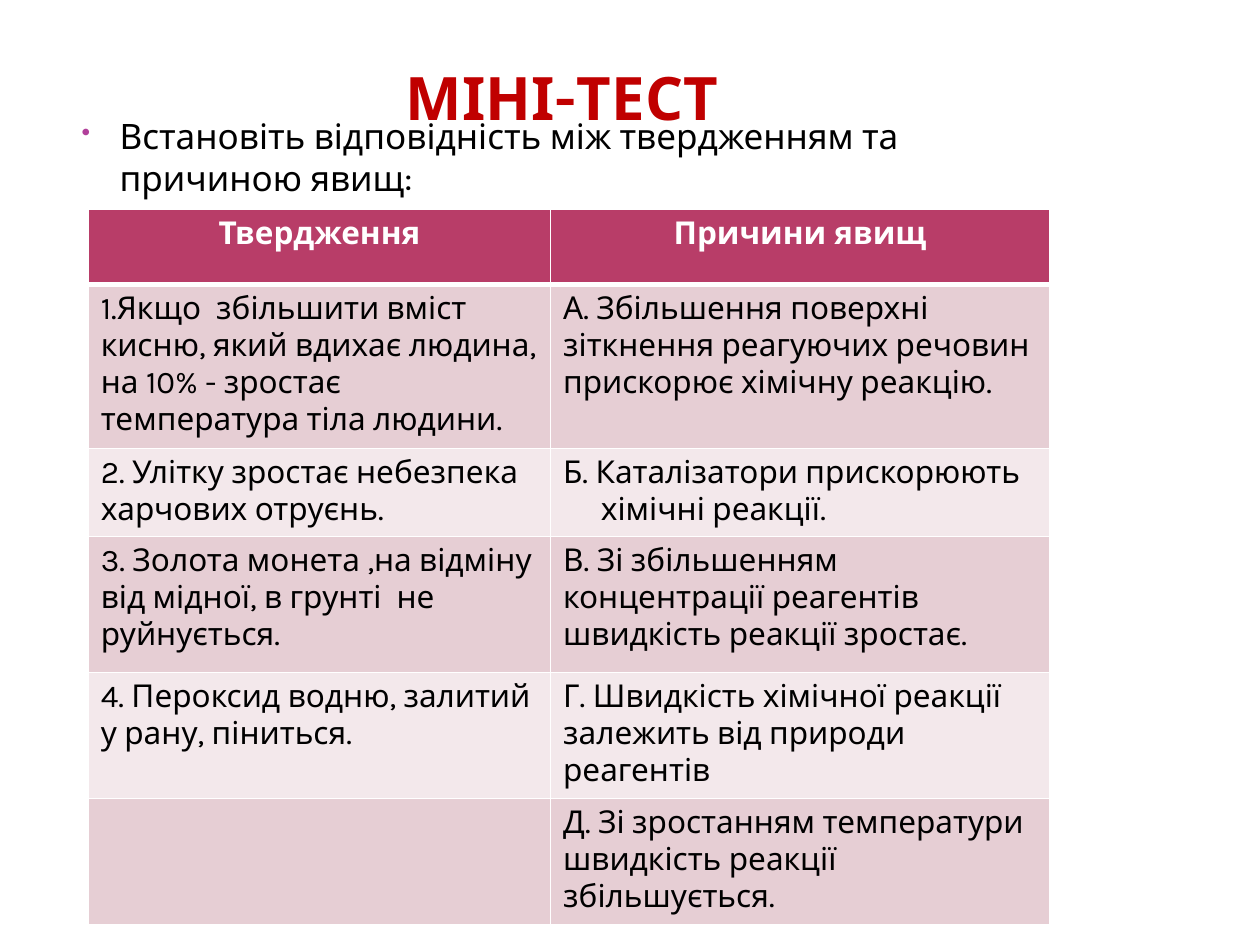
from collections import namedtuple
from dataclasses import dataclass

from lxml import etree
from pptx import Presentation
from pptx import util as u
from pptx.dml.color import RGBColor
from pptx.enum import text
from pptx.oxml.ns import qn

Box = namedtuple("Box", "left top width height")


@dataclass(frozen=True)
class Theme:
    """Colours, typeface and type sizes of the slide."""
    font: str = "Karla"
    title: str = "C00000"
    ink: str = "000000"
    paper: str = "FFFFFF"
    bullet: str = "B13F9A"
    header: str = "B83D68"
    bands: tuple = ("E6CED4", "F3E8EB")
    title_size: float = 34.2
    body_size: float = 20
    table_size: float = 18


THEME = Theme()
SLIDE_WIDTH, SLIDE_HEIGHT = u.Inches(10), u.Inches(7.5)
TITLE_BOX = Box(0.05, 0.047, 0.792, 0.167)
TASK_BOX = Box(0.055, 0.115, 0.792, 0.796)
TABLE_BOX = Box(0.07, 0.221, 0.763, 0.708)
COLUMN_INCHES = (3.67, 3.96)
ROW_INCHES = (0.6, 1.28, 0.69, 1.08, 0.69, 0.97)
ROWS = (
    ("Твердження", "Причини явищ"),
    ("1.Якщо  збільшити вміст кисню, який вдихає людина, на 10% - зростає температура тіла людини.",
     "А. Збільшення поверхні зіткнення реагуючих речовин прискорює хімічну реакцію."),
    ("2. Улітку зростає небезпека харчових отруєнь.",
     "Б. Каталізатори прискорюють хімічні реакції."),
    ("3. Золота монета ,на відміну від мідної, в грунті  не  руйнується.",
     "В. Зі збільшенням концентрації реагентів швидкість реакції зростає."),
    ("4. Пероксид водню, залитий у рану, піниться.",
     "Г. Швидкість хімічної реакції залежить від природи реагентів"),
    ("", "Д. Зі зростанням температури швидкість реакції збільшується."),
)
HANGING_CELL = (2, 1)


def place(box):
    """Turn shares of the slide into lengths."""
    return (int(box.left * SLIDE_WIDTH), int(box.top * SLIDE_HEIGHT),
            int(box.width * SLIDE_WIDTH), int(box.height * SLIDE_HEIGHT))


def write(frame, words, size, color=THEME.ink, bold=False,
          align=text.PP_ALIGN.LEFT, hang=0, bullet=None):
    """Write one formatted paragraph into a text frame."""
    frame.word_wrap = True
    para = frame.paragraphs[0]
    para.alignment = align
    props = para._p.get_or_add_pPr()
    if hang:
        props.set("marL", str(u.Inches(hang)))
        props.set("indent", str(-u.Inches(hang)))
    if bullet:
        tint = etree.SubElement(props, qn("a:buClr"))
        etree.SubElement(tint, qn("a:srgbClr"), val=THEME.bullet)
        etree.SubElement(props, qn("a:buSzPct"), val="73000")
        etree.SubElement(props, qn("a:buChar"), char=bullet)
    span = para.add_run()
    span.text = words
    span.font.name = THEME.font
    span.font.size = u.Pt(size)
    span.font.bold = bold
    span.font.color.rgb = RGBColor.from_string(color)


def add_title(page, box):
    """Format the title placeholder inside the box."""
    title = page.shapes.title
    title.left, title.top, title.width, title.height = place(box)
    frame = title.text_frame
    frame.auto_size = text.MSO_AUTO_SIZE.NONE
    frame.vertical_anchor = text.MSO_ANCHOR.BOTTOM
    frame.margin_left = frame.margin_right = u.Inches(0.05)
    frame.margin_top, frame.margin_bottom = 0, u.Inches(0.55)
    write(frame, "МІНІ-ТЕСТ", THEME.title_size, THEME.title, True, text.PP_ALIGN.CENTER)


def add_task(page, box):
    """Add the bulleted task above the table."""
    frame = page.shapes.add_textbox(*place(box)).text_frame
    write(frame, "Встановіть відповідність між твердженням та причиною явищ:",
          THEME.body_size, hang=0.3, bullet="•")


def set_borders(cell, **widths):
    """Draw the cell borders at the given widths in points."""
    props = cell._tc.get_or_add_tcPr()
    for side in "LRTB":
        line = etree.SubElement(props, qn(f"a:ln{side}"), w=str(u.Pt(widths.get(side, 1))))
        fill = etree.SubElement(line, qn("a:solidFill"))
        etree.SubElement(fill, qn("a:srgbClr"), val=THEME.paper)


def fill_cell(cell, row, column):
    """Fill, border and write one table cell."""
    is_header = row == 0
    rule = 3 if is_header else 1
    set_borders(cell, B=rule, T=3 if row == 1 else 1)
    cell.fill.solid()
    color = THEME.header if is_header else THEME.bands[(row - 1) % 2]
    cell.fill.fore_color.rgb = RGBColor.from_string(color)
    words = ROWS[row][column]
    if words:
        write(cell.text_frame, words, THEME.table_size,
              THEME.paper if is_header else THEME.ink, is_header,
              text.PP_ALIGN.CENTER if is_header else text.PP_ALIGN.LEFT,
              hang=0.3 if (row, column) == HANGING_CELL else 0)


def add_matching_table(page, box):
    """Add the table of statements and causes."""
    table = page.shapes.add_table(len(ROWS), len(COLUMN_INCHES), *place(box)).table
    for column, width in zip(table.columns, COLUMN_INCHES):
        column.width = u.Inches(width)
    for row, height in enumerate(ROW_INCHES):
        table.rows[row].height = u.Inches(height)
        for column in range(len(COLUMN_INCHES)):
            fill_cell(table.cell(row, column), row, column)


def main():
    """Build and save the deck."""
    deck = Presentation()
    deck.slide_width, deck.slide_height = SLIDE_WIDTH, SLIDE_HEIGHT
    page = deck.slides.add_slide(deck.slide_layouts[5])
    add_title(page, TITLE_BOX)
    add_task(page, TASK_BOX)
    add_matching_table(page, TABLE_BOX)
    deck.save("out.pptx")


if __name__ == "__main__":
    main()
